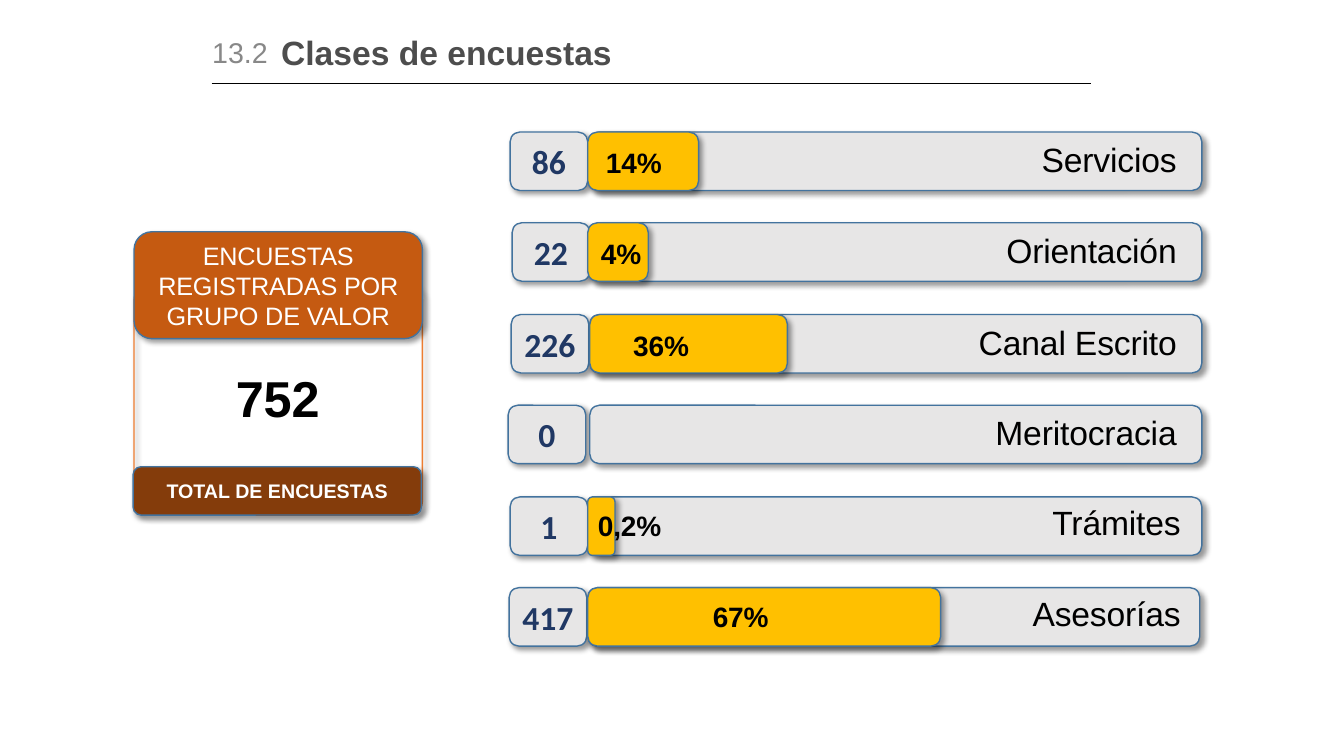
from collections import namedtuple

from lxml import etree
from pptx import Presentation
from pptx import util as u
from pptx.dml import color
from pptx.enum import shapes, text
from pptx.oxml import ns

PX = 9144  # 100 px to the inch


class Theme:
    font, digits = "Arial", "Calibri"
    black, white = "000000", "FFFFFF"
    title, number = "4D4D4D", "888888"
    gray, gold, edge, navy = "E7E6E6", "FFC000", "43739E", "203864"
    rust, brown, orange = "C55A11", "843C0B", "ED7D31"
    big, head, card, pct, foot, index = 36, 24, 18, 20, 14, 20.4


Row = namedtuple("Row", "count left track bar width pct start label right drop")

ROWS = [
    Row("86", 506, 585, 583, 110, "14%", 601, "Servicios", 1167, 11),
    Row("22", 508, 585, 583, 60, "4%", 596, "Orientación", 1167, 11),
    Row("226", 507, 585, 585, 196, "36%", 628, "Canal Escrito", 1167, 11),
    Row("0", 504, 585, 0, 0, "", 0, "Meritocracia", 1167, 11),
    Row("1", 506, 585, 583, 27, "0,2%", 593, "Trámites", 1171, 9),
    Row("417", 505, 583, 583, 350, "67%", 707, "Asesorías", 1171, 9),
]
TOP, HIGH, LABEL = 131, 58, 249
LEFT, MID, RIGHT = text.PP_ALIGN.LEFT, text.PP_ALIGN.CENTER, text.PP_ALIGN.RIGHT


def px(*sizes):
    return [u.Emu(size * PX) for size in sizes]


def rgb(code):
    return color.RGBColor.from_string(code)


def effects(shape, shadow=True):
    props = shape.element.spPr
    for old in props.findall(ns.qn("a:effectLst")):
        props.remove(old)
    group = etree.SubElement(props, ns.qn("a:effectLst"))
    if shadow:
        outer = etree.SubElement(group, ns.qn("a:outerShdw"), blurRad="50800",
                                 dist="38100", dir="2700000", algn="tl", rotWithShape="0")
        tone = etree.SubElement(outer, ns.qn("a:srgbClr"), val=Theme.black)
        etree.SubElement(tone, ns.qn("a:alpha"), val="40000")


def write(frame, lines, size, tone, bold=False, align=MID, font=Theme.font, gap=None, tight=False):
    frame.word_wrap = True
    for i, line in enumerate(lines):
        para = frame.paragraphs[0] if i == 0 else frame.add_paragraph()
        para.alignment = align
        if gap:
            para.line_spacing = gap
        run = para.add_run()
        run.text = line
        run.font.name, run.font.size, run.font.bold = font, u.Pt(size), bold
        run.font.color.rgb = rgb(tone)
        if tight:
            run.font._element.set("spc", "-10")


def box(slide, area, fill=None, edge=Theme.edge, round_by=None):
    shape = slide.shapes.add_shape(shapes.MSO_SHAPE.ROUNDED_RECTANGLE, *px(*area))
    if round_by:
        shape.adjustments[0] = round_by
    if fill:
        shape.fill.solid()
        shape.fill.fore_color.rgb = rgb(fill)
    else:
        shape.fill.background()
    shape.line.color.rgb = rgb(edge)
    shape.line.width = u.Pt(1)
    effects(shape)
    shape.text_frame.vertical_anchor = text.MSO_ANCHOR.MIDDLE
    return shape.text_frame


def label(slide, area, words, size, bold=False, align=LEFT):
    frame = slide.shapes.add_textbox(*px(*area)).text_frame
    frame.margin_left = frame.margin_right = frame.margin_bottom = 0
    frame.margin_top = u.Emu(2 * PX)
    write(frame, [words], size, Theme.black, bold, align, gap=u.Pt(24.5), tight=True)


def header(slide):
    rule = slide.shapes.add_connector(shapes.MSO_CONNECTOR.STRAIGHT, *px(210, 83, 1082, 83))
    rule.line.color.rgb = rgb(Theme.black)
    rule.line.width = u.Pt(1)
    effects(rule, shadow=False)
    title = slide.shapes.add_textbox(*px(269, 26, 813, 57)).text_frame
    title.vertical_anchor = text.MSO_ANCHOR.MIDDLE
    write(title, ["Clases de encuestas"], Theme.head, Theme.title, True, LEFT, gap=0.9)
    index = slide.shapes.add_textbox(*px(199, 36, 78, 58)).text_frame
    write(index, ["13.2"], Theme.index, Theme.number, gap=0.8)


def bar(slide, row, top):
    count = box(slide, (row.left, top, 77, HIGH), Theme.gray)
    write(count, [row.count], Theme.head, Theme.navy, True, font=Theme.digits)
    box(slide, (row.track, top, 607, HIGH), Theme.gray)
    label(slide, (row.right - LABEL, top + row.drop, LABEL, 35),
          row.label, Theme.head, align=RIGHT)
    if row.width:
        box(slide, (row.bar, top, row.width, HIGH), Theme.gold)
        label(slide, (row.start, top + row.drop, 80, 35), row.pct, Theme.pct, True)


def card(slide):
    label(slide, (133, 388, 285, 39), "752", Theme.big, True, MID)
    box(slide, (133, 284, 286, 227), edge=Theme.orange, round_by=0.06)
    head = box(slide, (133, 230, 286, 106), Theme.rust)
    write(head, ["ENCUESTAS", "REGISTRADAS POR GRUPO DE VALOR"],
          Theme.card, Theme.white, tight=True)
    foot = box(slide, (132, 463, 286, 48), Theme.brown)
    write(foot, ["TOTAL DE ENCUESTAS"], Theme.foot, Theme.white, True)


def main():
    deck = Presentation()
    deck.slide_width, deck.slide_height = px(1333, 750)
    slide = deck.slides.add_slide(deck.slide_layouts[6])

    # Title and rule
    header(slide)

    # One bar per survey class, evenly spaced
    for i, row in enumerate(ROWS):
        bar(slide, row, TOP + i * 905 // 10)

    # Total card
    card(slide)
    deck.save("out.pptx")


if __name__ == "__main__":
    main()
